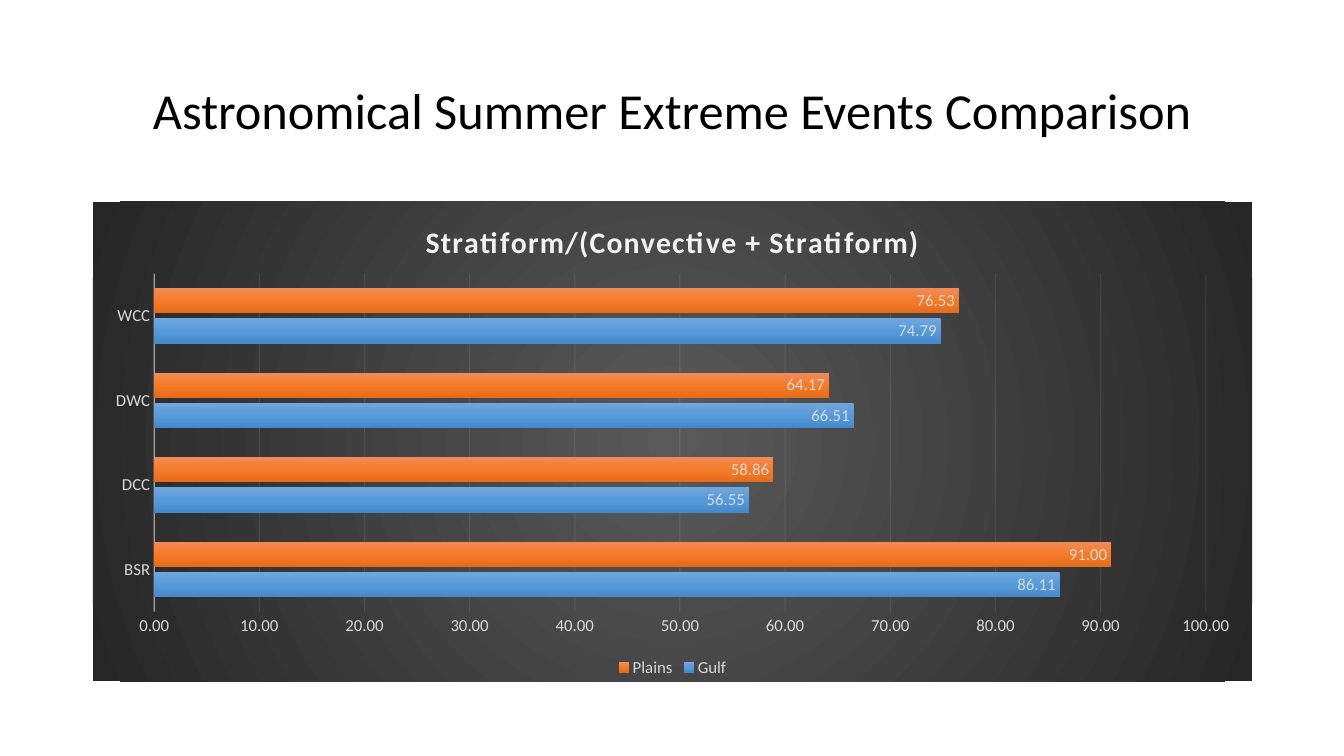
from dataclasses import dataclass
from typing import Any

import lxml.etree
import pptx
import pptx.chart.data
import pptx.dml.color
import pptx.enum.chart
import pptx.enum.text
import pptx.oxml
import pptx.oxml.ns
import pptx.util

FONT = "Calibri"
COLORS = {
    "title": "000000",
    "label": "D9D9D9",
    "light": "F2F2F2",
    "panel_center": "595959",
    "panel_edge": "262626",
}
CATEGORIES = ["BSR", "DCC", "DWC", "WCC"]
LINEAR = '<a:lin ang="5400000" scaled="0"/>'
RADIAL = ('<a:path path="circle"><a:fillToRect l="50000" t="50000" '
          'r="50000" b="50000"/></a:path>')


@dataclass
class Region:
    name: str
    values: list[float]
    shades: list[str]


REGIONS = [
    Region("Gulf", [86.11, 56.55, 66.51, 74.79], ["71A6DB", "559BDB", "448ACA"]),
    Region("Plains", [91, 58.86, 64.17, 76.53], ["F18C57", "F67B28", "E56C19"]),
]


def rgb(name: str) -> pptx.dml.color.RGBColor:
    return pptx.dml.color.RGBColor.from_string(COLORS[name])


def apply(obj: Any, values: dict[str, Any]) -> None:
    for name, value in values.items():
        setattr(obj, name, value)


def set_font(font: Any, size: float, color: str, bold: bool = False) -> None:
    apply(font, {"name": FONT, "size": pptx.util.Pt(size), "bold": bold})
    font.color.rgb = rgb(color)


def gradient(shades: list[str], direction: str) -> Any:
    """Build a gradient fill with evenly spaced stops."""
    step = 100000 // (len(shades) - 1)
    stops = "".join(f'<a:gs pos="{i * step}"><a:srgbClr val="{shade}"/></a:gs>'
                    for i, shade in enumerate(shades))
    return pptx.oxml.parse_xml(
        f'<a:gradFill {pptx.oxml.ns.nsdecls("a")} rotWithShape="1">'
        f"<a:gsLst>{stops}</a:gsLst>{direction}</a:gradFill>")


def set_line(line: Any, width: float, opacity: int) -> None:
    line.width = pptx.util.Pt(width)
    line.color.rgb = rgb("light")
    clr = line.fill._xPr.find(".//" + pptx.oxml.ns.qn("a:srgbClr"))
    alpha = lxml.etree.SubElement(clr, pptx.oxml.ns.qn("a:alpha"))
    alpha.set("val", str(opacity * 1000))


def add_title(slide: Any) -> None:
    sp = slide.shapes.title
    apply(sp, {
        "left": pptx.util.Inches(0.92), "top": pptx.util.Inches(0.4),
        "width": pptx.util.Inches(11.5), "height": pptx.util.Inches(1.45),
    })
    tf = sp.text_frame
    apply(tf, {
        "text": "Astronomical Summer Extreme Events Comparison",
        "word_wrap": True,
        "auto_size": pptx.enum.text.MSO_AUTO_SIZE.NONE,
        "vertical_anchor": pptx.enum.text.MSO_ANCHOR.MIDDLE,
    })
    p = tf.paragraphs[0]
    apply(p, {"alignment": pptx.enum.text.PP_ALIGN.CENTER, "line_spacing": 0.9})
    set_font(p.runs[0].font, 36, "title")


def add_comparison_chart(slide: Any) -> Any:
    data = pptx.chart.data.CategoryChartData(number_format="0.00")
    data.categories = CATEGORIES
    for region in REGIONS:
        data.add_series(region.name, region.values)
    chart = slide.shapes.add_chart(
        pptx.enum.chart.XL_CHART_TYPE.BAR_CLUSTERED,
        pptx.util.Inches(0.92), pptx.util.Inches(2),
        pptx.util.Inches(11.5), pptx.util.Inches(4.76), data).chart
    set_font(chart.font, 10, "title")
    return chart


def style_panel(chart: Any) -> None:
    # Dark radial background
    sp_pr = pptx.oxml.parse_xml(f'<c:spPr {pptx.oxml.ns.nsdecls("c", "a")}/>')
    sp_pr.append(gradient([COLORS["panel_center"], COLORS["panel_edge"]], RADIAL))
    chart_xml = chart._chartSpace.find(pptx.oxml.ns.qn("c:chart"))
    chart_xml.addnext(sp_pr)

    # Plot area as fractions of the panel
    area = chart_xml.find(pptx.oxml.ns.qn("c:plotArea"))
    for old in area.findall(pptx.oxml.ns.qn("c:layout")):
        area.remove(old)
    box = "".join(f'<c:{key} val="{value}"/>' for key, value in {
        "layoutTarget": "inner", "xMode": "edge", "yMode": "edge",
        "x": 0.053, "y": 0.15, "w": 0.907, "h": 0.705}.items())
    area.insert(0, pptx.oxml.parse_xml(
        f'<c:layout {pptx.oxml.ns.nsdecls("c")}>'
        f"<c:manualLayout>{box}</c:manualLayout></c:layout>"))

    # Heading
    chart.has_title = True
    tf = chart.chart_title.text_frame
    tf.text = "Stratiform/(Convective + Stratiform)"
    r = tf.paragraphs[0].runs[0]
    set_font(r.font, 21.3, "light", bold=True)
    r.font._element.set("spc", "100")
    chart.chart_title.include_in_layout = False

    # Legend
    chart.has_legend = True
    apply(chart.legend, {
        "position": pptx.enum.chart.XL_LEGEND_POSITION.BOTTOM,
        "include_in_layout": False,
    })
    set_font(chart.legend.font, 12, "label")


def style_axes(chart: Any) -> None:
    for axis in (chart.category_axis, chart.value_axis):
        apply(axis, {
            "major_tick_mark": pptx.enum.chart.XL_TICK_MARK.NONE,
            "minor_tick_mark": pptx.enum.chart.XL_TICK_MARK.NONE,
        })
        set_font(axis.tick_labels.font, 12, "label")
    set_line(chart.category_axis.format.line, 1, 54)
    axis = chart.value_axis
    apply(axis, {"minimum_scale": 0, "maximum_scale": 100, "major_unit": 10,
                 "has_major_gridlines": True})
    apply(axis.tick_labels, {"number_format": "0.00",
                             "number_format_is_linked": False})
    axis.format.line.fill.background()
    set_line(axis.major_gridlines.format.line, 0.75, 10)


def style_bars(chart: Any) -> None:
    plot = chart.plots[0]
    apply(plot, {"gap_width": 115, "overlap": -20, "vary_by_categories": False})
    for series, region in zip(plot.series, REGIONS):
        series.invert_if_negative = False
        series._element.get_or_add_spPr().append(gradient(region.shades, LINEAR))
        labels = series.data_labels
        apply(labels, {
            "show_value": True,
            "position": pptx.enum.chart.XL_LABEL_POSITION.INSIDE_END,
            "number_format": "0.00",
            "number_format_is_linked": False,
        })
        set_font(labels.font, 12, "label")


def main() -> None:
    prs = pptx.Presentation()
    apply(prs, {"slide_width": pptx.util.Inches(13.33),
                "slide_height": pptx.util.Inches(7.5)})
    slide = prs.slides.add_slide(prs.slide_layouts[5])
    add_title(slide)
    chart = add_comparison_chart(slide)
    style_panel(chart)
    style_axes(chart)
    style_bars(chart)
    prs.save("out.pptx")


if __name__ == "__main__":
    main()
